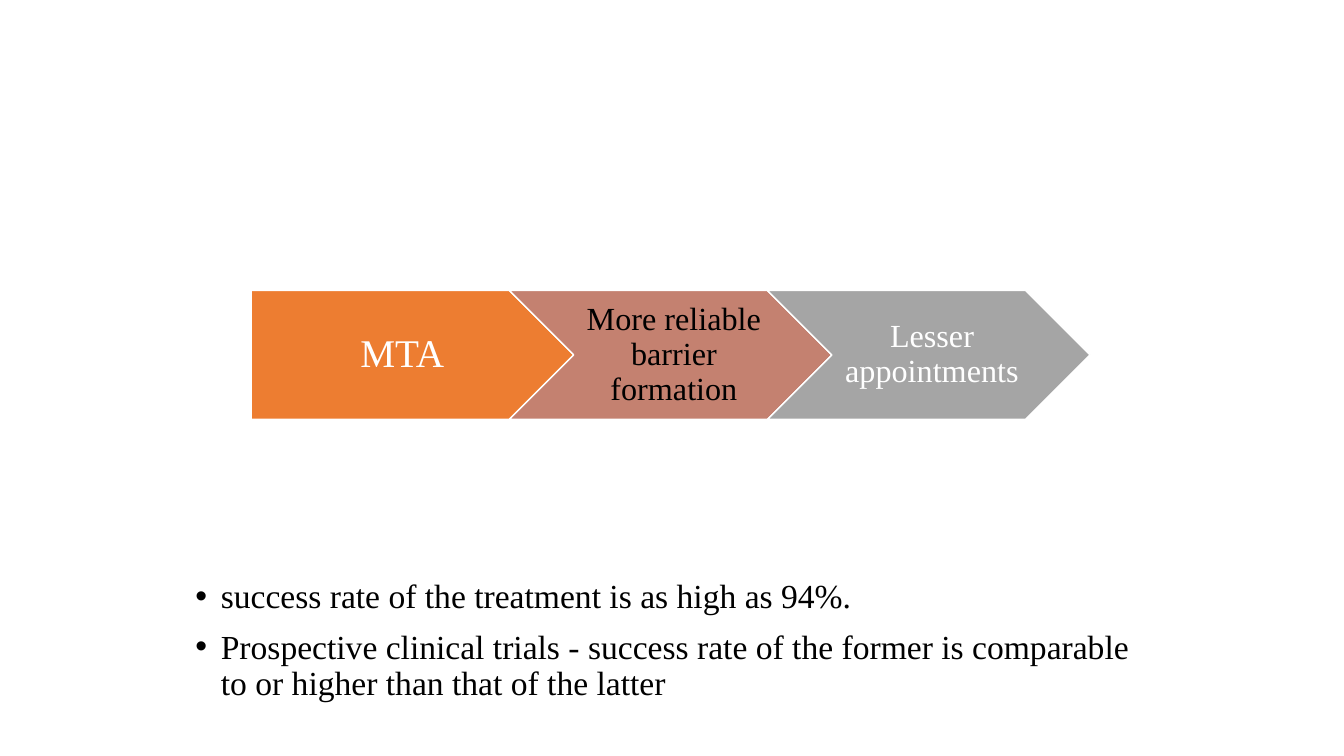
from pptx import Presentation
from pptx.dml.color import RGBColor
from pptx.enum.shapes import MSO_SHAPE as Preset
from pptx.enum.text import MSO_ANCHOR as Anchor, MSO_AUTO_SIZE as AutoSize, PP_ALIGN as Align
from pptx.util import Cm, Pt
from lxml import etree

# Content: text, preset, fill, font colour, size, left inset, right inset
STEPS = [
    ("MTA", Preset.PENTAGON, "ED7D31", "FFFFFF", 28, 0.4, 0.1),
    ("More reliable barrier formation", Preset.CHEVRON, "C48170", "000000", 23, 0.25, 0.08),
    ("Lesser appointments", Preset.CHEVRON, "A5A5A5", "FFFFFF", 23, 0.25, 0.08),
]
FINDINGS = [
    "success rate of the treatment is as high as 94%.",
    "Prospective clinical trials - success rate of the former is comparable "
    "to or higher than that of the latter",
]
FONT = "Times New Roman"

# Geometry in centimetres
STEP_LEFT, STEP_TOP = 6.33, 7.32
STEP_WIDTH, STEP_HEIGHT = 8.13, 3.25
STEP_PITCH = STEP_WIDTH - STEP_HEIGHT / 2


def color(hex_code):
    return RGBColor.from_string(hex_code)


def format_paragraph(paragraph, size, hex_code):
    paragraph.line_spacing = 0.9
    for run in paragraph.runs:
        run.font.name = FONT
        run.font.size = Pt(size)
        run.font.color.rgb = color(hex_code)


def add_step(slide, index, step):
    text, preset, fill, text_color, size, left_inset, right_inset = step
    shape = slide.shapes.add_shape(
        preset, Cm(STEP_LEFT + index * STEP_PITCH), Cm(STEP_TOP),
        Cm(STEP_WIDTH), Cm(STEP_HEIGHT))
    shape.shadow.inherit = False
    shape.fill.solid()
    shape.fill.fore_color.rgb = color(fill)
    shape.line.color.rgb = color("FFFFFF")
    shape.line.width = Pt(1)
    frame = shape.text_frame
    frame.word_wrap = True
    frame.vertical_anchor = Anchor.MIDDLE
    frame.margin_left, frame.margin_right = Cm(left_inset), Cm(right_inset)
    frame.margin_top = frame.margin_bottom = Cm(0.18)
    frame.text = text
    paragraph = frame.paragraphs[0]
    paragraph.alignment = Align.CENTER
    format_paragraph(paragraph, size, text_color)


def fill_findings(body):
    body.left, body.top, body.width, body.height = Cm(4.67), Cm(14.48), Cm(24.51), Cm(3.63)
    frame = body.text_frame
    frame.auto_size = AutoSize.NONE
    frame.vertical_anchor = Anchor.TOP
    frame.text = "\n".join(FINDINGS)
    for index, paragraph in enumerate(frame.paragraphs):
        format_paragraph(paragraph, 24, "000000")
        paragraph.space_before = Pt(10 if index else 0)
        # Hanging bullet
        properties = paragraph._p.get_or_add_pPr()
        properties.set("marL", str(Cm(0.64)))
        properties.set("indent", str(-Cm(0.64)))
        namespace = etree.QName(properties).namespace
        for tag, name, value in (("buFont", "typeface", "Arial"), ("buChar", "char", "•")):
            etree.SubElement(properties, f"{{{namespace}}}{tag}").set(name, value)


def main():
    presentation = Presentation()
    presentation.slide_width, presentation.slide_height = Cm(33.87), Cm(19.05)
    slide = presentation.slides.add_slide(presentation.slide_layouts[1])

    # The slide shows no title
    title = slide.shapes.title
    title.element.getparent().remove(title.element)

    # Process arrows
    for index, step in enumerate(STEPS):
        add_step(slide, index, step)

    # Findings below the arrows
    fill_findings(slide.placeholders[1])
    presentation.save("out.pptx")


if __name__ == "__main__":
    main()
